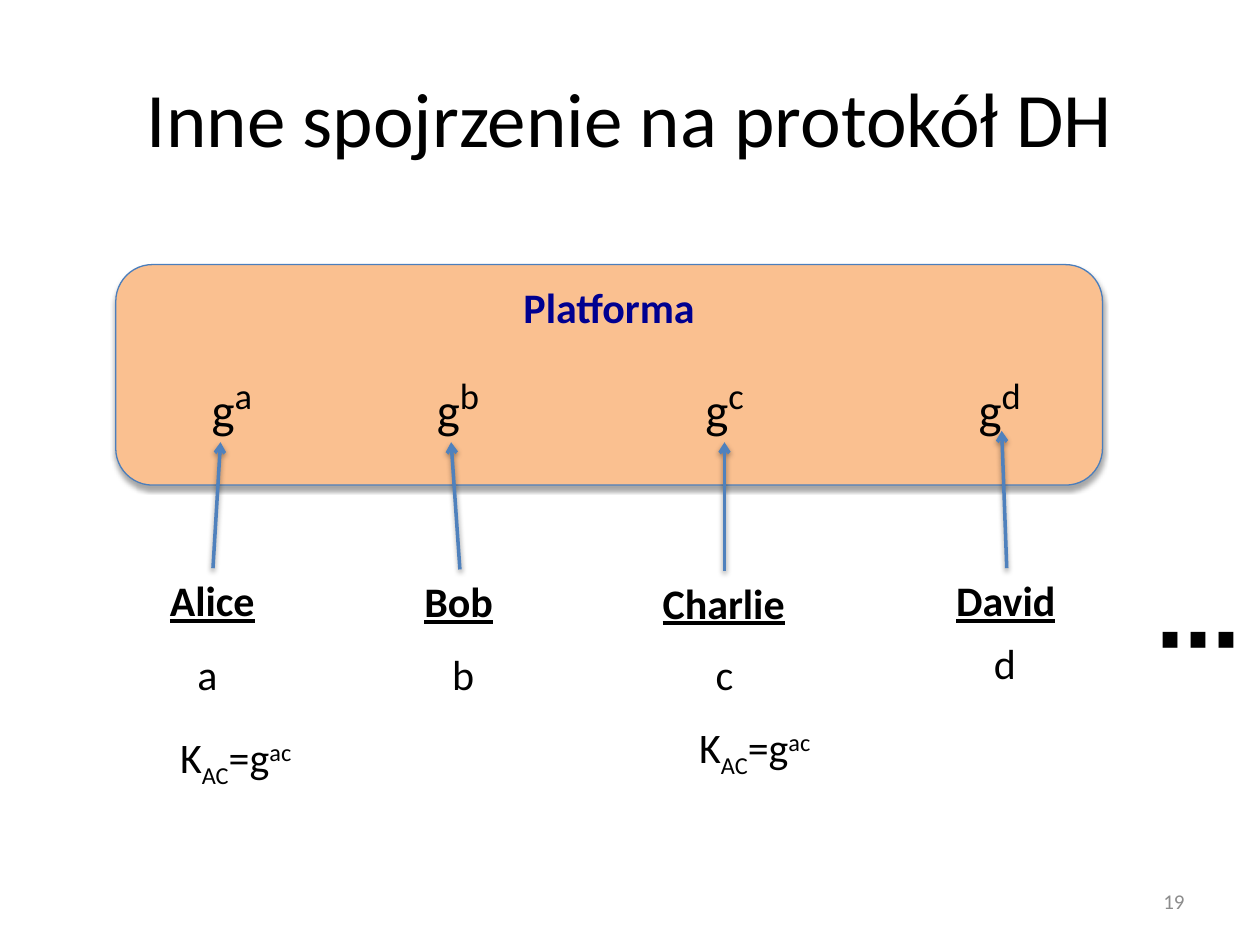
from lxml.etree import SubElement
from pptx import Presentation
from pptx.dml.color import RGBColor
from pptx.enum.shapes import MSO_CONNECTOR, MSO_SHAPE
from pptx.enum.text import MSO_ANCHOR, MSO_AUTO_SIZE, PP_ALIGN
from pptx.oxml.ns import qn
from pptx.util import Pt

COLORS = {
    "ink": "000000",
    "server_fill": "FAC090",
    "server_line": "4B7EBC",
    "server_name": "000090",
    "arrow": "4F81BD",
    "page": "8C8C8C",
}
FONT = "Calibri"
SERVER_BOX = (66.2, 151.2, 563.8, 126)

# name, secret, box of the name, box of the secret
PEOPLE = [
    ("Alice", "a", (90, 324.7, 63.4, 36), (105.8, 367.2, 25.9, 36)),
    ("Bob", "b", (235.4, 325.4, 54, 36), (251.3, 367.2, 27.4, 36)),
    ("Charlie", "c", (371.5, 326.2, 85, 36), (401.8, 367.2, 24.5, 36)),
    ("David", "d", (539.3, 324.7, 72, 36), (560.9, 360.7, 27.4, 36)),
]
# left offset and width of each public key inside the server
PUBLIC_KEYS = [(47.6, 39.6), (176.4, 40.3), (329.8, 38.2), (486, 40.3)]
# start and end of each upload arrow
UPLOADS = [
    (121.7, 324.7, 126, 252.7),
    (262.8, 325.4, 257.8, 252.7),
    (414, 326.2, 414, 252.7),
    (575.3, 324.7, 572.4, 246.2),
]
SHARED_KEY_BOXES = [(95.8, 414.7, 83.5, 36), (392.4, 409, 83.5, 36)]


def rgb(name):
    return RGBColor.from_string(COLORS[name])


def points(box):
    return [Pt(length) for length in box]


def add_run(paragraph, text, size, color="ink", bold=False, underline=False, baseline=0):
    run = paragraph.add_run()
    run.text = text
    font = run.font
    font.name, font.size, font.color.rgb = FONT, Pt(size), rgb(color)
    if bold:
        font.bold = True
    if underline:
        font.underline = True
    if baseline:
        run._r.get_or_add_rPr().set("baseline", str(baseline * 1000))


def add_label(shapes, box):
    """Add an unwrapped text box and return its paragraph."""
    frame = shapes.add_textbox(*points(box)).text_frame
    frame.word_wrap = False
    frame.auto_size = MSO_AUTO_SIZE.SHAPE_TO_FIT_TEXT
    return frame.paragraphs[0]


def add_shadow(shape, distance, opacity):
    effects = SubElement(shape._element.spPr, qn("a:effectLst"))
    shadow = SubElement(effects, qn("a:outerShdw"), blurRad=str(Pt(3.1)),
                        dist=str(Pt(distance)), dir="5400000", rotWithShape="0")
    color = SubElement(shadow, qn("a:srgbClr"), val=COLORS["ink"])
    SubElement(color, qn("a:alpha"), val=str(opacity * 1000))


def add_title(slide, box):
    title = slide.shapes.title
    title.left, title.top, title.width, title.height = points(box)
    title.text_frame.vertical_anchor = MSO_ANCHOR.MIDDLE
    paragraph = title.text_frame.paragraphs[0]
    paragraph.alignment = PP_ALIGN.CENTER
    add_run(paragraph, "Inne spojrzenie na protokół DH", 44)


def add_page_number(slide, box):
    frame = slide.shapes.add_textbox(*points(box)).text_frame
    frame.word_wrap = True
    frame.vertical_anchor = MSO_ANCHOR.MIDDLE
    paragraph = frame.paragraphs[0]
    paragraph.alignment = PP_ALIGN.RIGHT
    add_run(paragraph, "19", 12, "page")


def add_server(slide, box):
    server = slide.shapes.add_shape(MSO_SHAPE.ROUNDED_RECTANGLE, *points(box))
    server.fill.solid()
    server.fill.fore_color.rgb = rgb("server_fill")
    server.line.color.rgb = rgb("server_line")
    server.line.width = Pt(0.75)
    add_shadow(server, 1.8, 35)
    server.text_frame.word_wrap = True
    server.text_frame.vertical_anchor = MSO_ANCHOR.TOP
    paragraph = server.text_frame.paragraphs[0]
    paragraph.alignment = PP_ALIGN.CENTER
    add_run(paragraph, "Platforma", 24, "server_name", bold=True)


def add_public_keys(slide, box):
    left, top = box[:2]
    for (_, secret, *_), (offset, width) in zip(PEOPLE, PUBLIC_KEYS):
        paragraph = add_label(slide.shapes, (left + offset, top + 54, width, 41))
        add_run(paragraph, "g", 28)
        add_run(paragraph, secret, 36, baseline=30)


def add_person(slide, name, secret, name_box, secret_box):
    person = slide.shapes.add_group_shape()
    add_run(add_label(person.shapes, name_box), name, 24, bold=True, underline=True)
    add_run(add_label(person.shapes, secret_box), secret, 24)


def add_upload(slide, ends):
    arrow = slide.shapes.add_connector(MSO_CONNECTOR.STRAIGHT, *points(ends))
    arrow.line.color.rgb = rgb("arrow")
    arrow.line.width = Pt(2)
    SubElement(arrow.line._get_or_add_ln(), qn("a:tailEnd"), type="arrow")
    add_shadow(arrow, 1.6, 38)


def add_shared_key(slide, box):
    paragraph = add_label(slide.shapes, box)
    for text, baseline in (("K", 0), ("AC", -25), ("=g", 0), ("ac", 30)):
        add_run(paragraph, text, 24, baseline=baseline)


def main():
    deck = Presentation()
    deck.slide_width, deck.slide_height = Pt(720), Pt(540)
    slide = deck.slides.add_slide(deck.slide_layouts[5])
    add_title(slide, (36, 21.6, 648, 90))
    add_page_number(slide, (516, 500.5, 168, 28.8))
    add_server(slide, SERVER_BOX)
    for person in PEOPLE:
        add_person(slide, *person)
    add_run(add_label(slide.shapes, (653.8, 331.2, 38.9, 65.5)), "⋯", 48, bold=True)
    add_public_keys(slide, SERVER_BOX)
    for ends in UPLOADS:
        add_upload(slide, ends)
    for box in SHARED_KEY_BOXES:
        add_shared_key(slide, box)
    deck.save("out.pptx")


if __name__ == "__main__":
    main()
